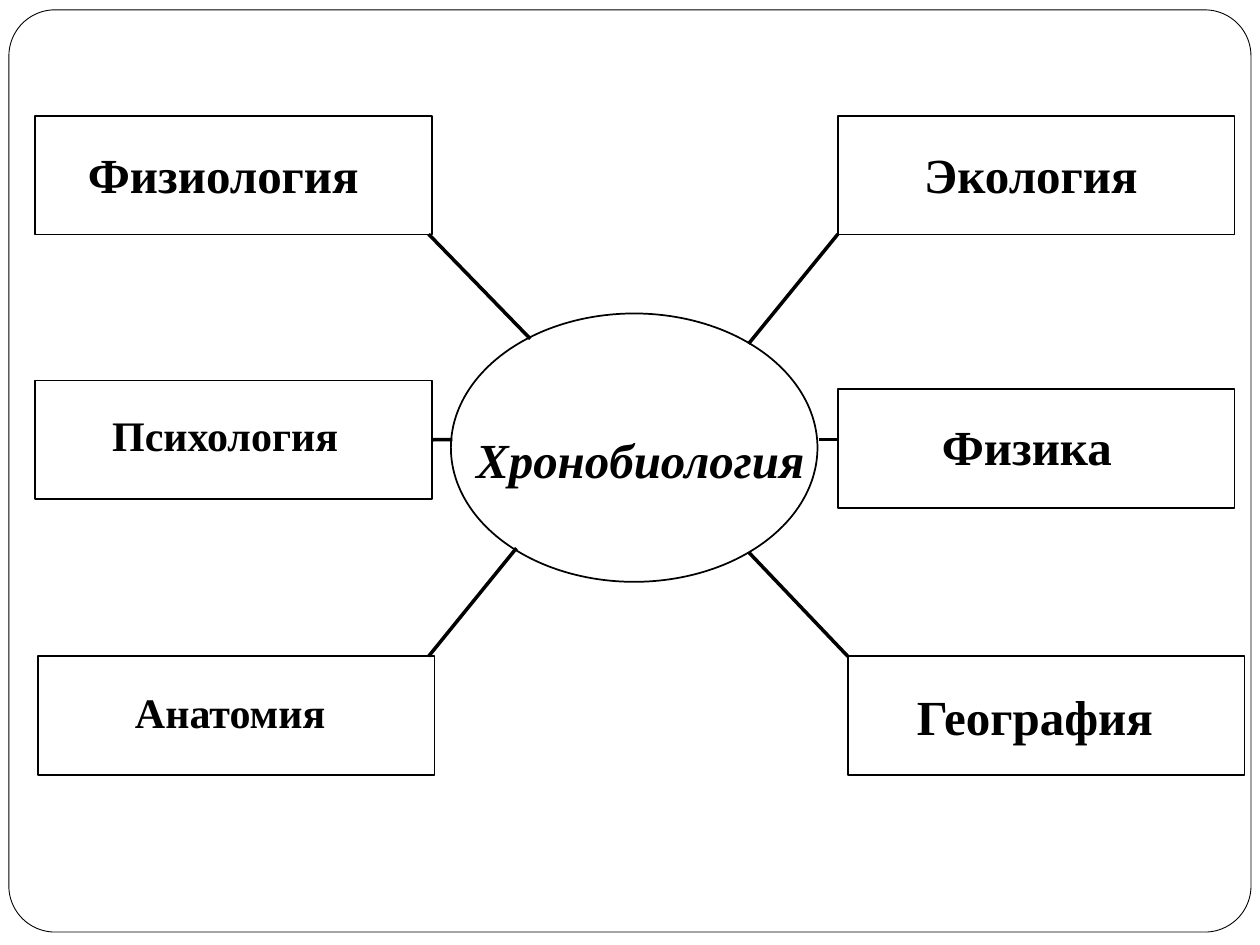
from dataclasses import dataclass

from lxml import etree
from pptx import Presentation
from pptx.dml.color import RGBColor
from pptx.enum.shapes import MSO_CONNECTOR, MSO_SHAPE
from pptx.enum.text import MSO_AUTO_SIZE, PP_ALIGN
from pptx.oxml.ns import qn
from pptx.util import Cm, Pt

STRAIGHT = MSO_CONNECTOR.STRAIGHT
RECTANGLE = MSO_SHAPE.RECTANGLE
ROUNDED = MSO_SHAPE.ROUNDED_RECTANGLE
OVAL = MSO_SHAPE.OVAL
LEFT, CENTER = PP_ALIGN.LEFT, PP_ALIGN.CENTER
FIT_SHAPE = MSO_AUTO_SIZE.SHAPE_TO_FIT_TEXT
RIGHT_SIDE = 3


@dataclass(frozen=True)
class Theme:
    font: str = "Times New Roman"
    ink: RGBColor = RGBColor(0, 0, 0)
    paper: RGBColor = RGBColor(255, 255, 255)
    large: int = 28
    small: int = 24
    frame_line: float = 0.5
    box_line: float = 1
    link_line: float = 2


THEME = Theme()
BOX_WIDTH, BOX_HEIGHT = 8, 2.39
LABEL_WIDTH = 7.01
LABEL_HEIGHTS = {THEME.large: 1.45, THEME.small: 1.27}

# name, box left, box top, label left, label top, size
SCIENCES = [
    ("Физиология", 0.71, 2.34, 1.12, 2.79, THEME.large),
    ("Психология", 0.71, 7.67, 1.14, 8.13, THEME.small),
    ("Анатомия", 0.76, 13.23, 1.24, 13.72, THEME.small),
    ("Экология", 16.89, 2.34, 17.4, 2.79, THEME.large),
    ("Физика", 16.89, 7.85, 17.32, 8.28, THEME.large),
    ("География", 17.09, 13.23, 17.48, 13.72, THEME.large),
]
LINKS = {
    "Физиология": (8.64, 4.72, 10.69, 6.83),
    "Психология": (8.71, 8.86, 9.12, 8.86),
    "Анатомия": (8.64, 13.23, 10.41, 11.05),
    "Экология": (16.89, 4.72, 15.09, 6.93),
    "Физика": (16.89, 8.86, 16.51, 8.86),
    "География": (17.09, 13.23, 15.09, 11.13),
}


class Painter:
    def __init__(self, page, theme):
        self.page = page
        self.theme = theme

    def shape(self, kind, left, top, width, height, weight, filled=False):
        shape = self.page.shapes.add_shape(
            kind, Cm(left), Cm(top), Cm(width), Cm(height))
        shape.shadow.inherit = False
        if filled:
            shape.fill.solid()
            shape.fill.fore_color.rgb = self.theme.paper
        else:
            shape.fill.background()
        shape.line.color.rgb = self.theme.ink
        shape.line.width = Pt(weight)
        return shape

    def link(self, x1, y1, x2, y2):
        link = self.page.shapes.add_connector(
            STRAIGHT, Cm(x1), Cm(y1), Cm(x2), Cm(y2))
        link.line.color.rgb = self.theme.ink
        link.line.width = Pt(self.theme.link_line)
        etree.SubElement(link._element.spPr, qn("a:effectLst"))
        return link

    def label(self, text, left, top, width, size, align=CENTER, italic=False):
        box = self.page.shapes.add_textbox(
            Cm(left), Cm(top), Cm(width), Cm(LABEL_HEIGHTS[size]))
        frame = box.text_frame
        frame.word_wrap = True
        frame.auto_size = FIT_SHAPE
        frame.text = text
        para = frame.paragraphs[0]
        para.alignment = align
        font = para.runs[0].font
        font.name = self.theme.font
        font.size = Pt(size)
        font.bold = True
        font.italic = italic
        font.color.rgb = self.theme.ink


def main():
    deck = Presentation()
    deck.slide_width, deck.slide_height = Cm(25.4), Cm(19.05)
    page = deck.slides.add_slide(deck.slide_layouts[6])
    painter = Painter(page, THEME)

    frame = painter.shape(ROUNDED, 0.18, 0.2, 25.04, 18.59,
                          THEME.frame_line, filled=True)
    frame.adjustments[0] = 0.05
    painter.shape(OVAL, 9.09, 6.32, 7.39, 5.41, THEME.box_line)
    painter.label("Хронобиология", 9.35, 8.53, 7.39, THEME.large,
                  align=LEFT, italic=True)

    boxes = {
        name: painter.shape(RECTANGLE, left, top, BOX_WIDTH, BOX_HEIGHT,
                            THEME.box_line)
        for name, left, top, *_ in SCIENCES
    }
    links = {name: painter.link(*ends) for name, ends in LINKS.items()}
    links["Психология"].begin_connect(boxes["Психология"], RIGHT_SIDE)
    for name, _, _, left, top, size in SCIENCES:
        painter.label(name + " ", left, top, LABEL_WIDTH, size)

    deck.save("out.pptx")


if __name__ == "__main__":
    main()
